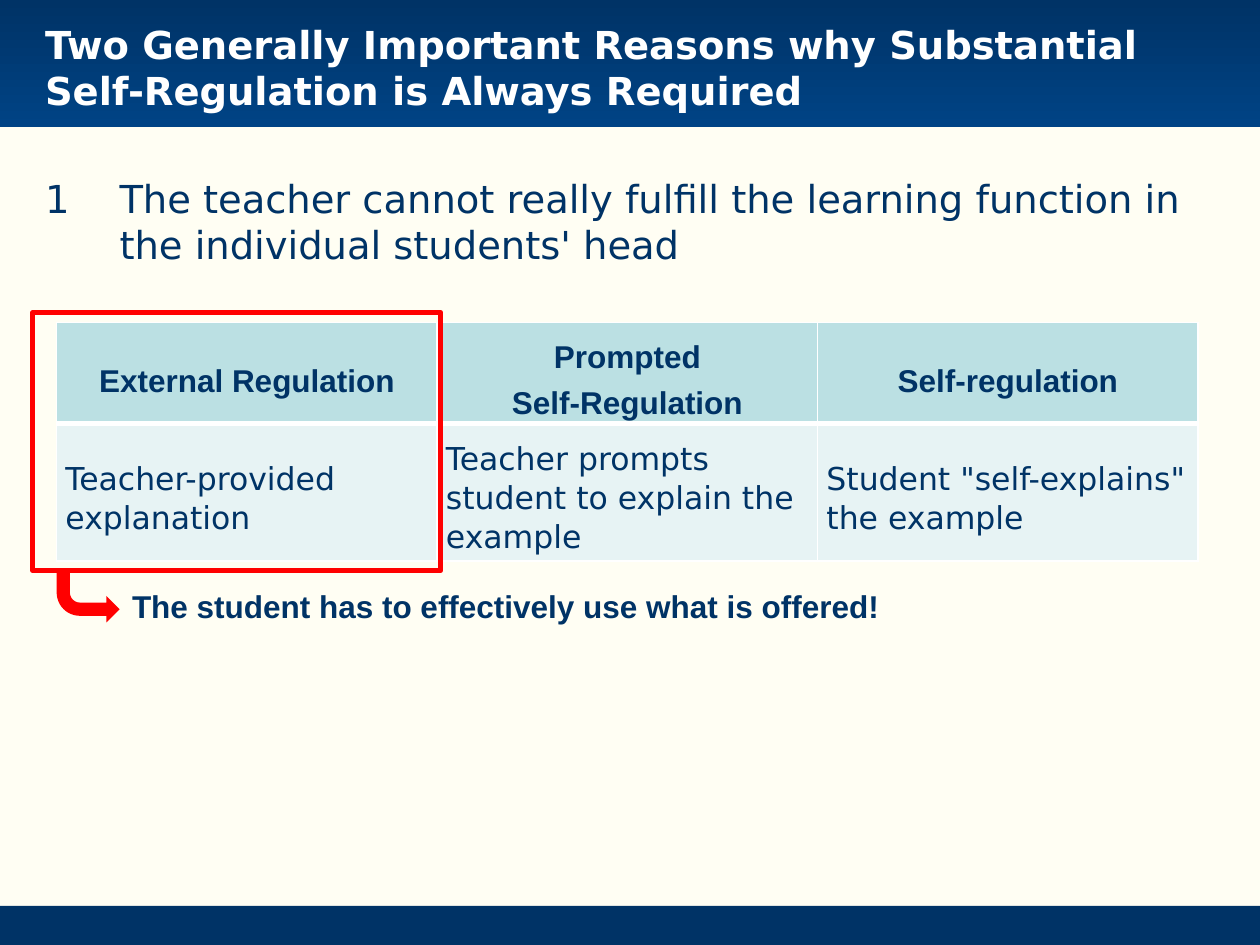
from lxml import etree
from pptx import Presentation
from pptx import util as u
from pptx.dml.color import RGBColor
from pptx.enum import shapes, text
from pptx.oxml.ns import qn

COLUMNS, ROWS = 100, 75
NAVY, WHITE, RED = "003366", "FFFFFF", "FF0000"
SANS, ARIAL = "DejaVu Sans", "Arial"


def color(value):
    return RGBColor.from_string(value)


class SlideBuilder:
    def __init__(self, deck, background):
        self.cell_width = deck.slide_width / COLUMNS
        self.cell_height = deck.slide_height / ROWS
        self.page = deck.slides.add_slide(deck.slide_layouts[6])
        self.paint(self.page.background, background)

    def across(self, columns):
        return u.Emu(round(columns * self.cell_width))

    def down(self, rows):
        return u.Emu(round(rows * self.cell_height))

    def place(self, left, top, width, height):
        return self.across(left), self.down(top), self.across(width), self.down(height)

    def paint(self, target, value):
        target.fill.solid()
        target.fill.fore_color.rgb = color(value)

    def style(self, para, size, face, bold=False, ink=NAVY):
        para.font.size = u.Pt(size)
        para.font.name = face
        para.font.bold = bold
        para.font.color.rgb = color(ink)

    def shape(self, kind, area, fill=None, outline=None):
        shape = self.page.shapes.add_shape(kind, *self.place(*area))
        shape.shadow.inherit = False
        if fill:
            self.paint(shape, fill)
        else:
            shape.fill.background()
        if outline:
            shape.line.color.rgb = color(outline)
            shape.line.width = u.Pt(2.75)
        else:
            shape.line.fill.background()
        return shape

    def gradient_bar(self, area, start, end):
        bar = self.shape(shapes.MSO_SHAPE.RECTANGLE, area, start)
        bar.fill.gradient()
        bar.fill.gradient_angle = 270
        for stop, value in zip(bar.fill.gradient_stops, (start, end)):
            stop.color.rgb = color(value)

    def turn_arrow(self, area, fill):
        arrow = self.shape(shapes.MSO_SHAPE.BENT_ARROW, area, fill)
        for index, share in enumerate((0.25, 0.25, 0.25, 0.44)):
            arrow.adjustments[index] = share
        arrow._element.spPr.find(qn("a:xfrm")).set("flipV", "1")

    def text(self, area, content, size, face, bold=False, ink=NAVY,
             anchor=text.MSO_ANCHOR.TOP, hanging=0):
        box = self.page.shapes.add_textbox(*self.place(*area))
        frame = box.text_frame
        frame.word_wrap = True
        frame.vertical_anchor = anchor
        para = frame.paragraphs[0]
        para.text = content
        if hanging:
            indent = self.across(hanging)
            properties = para._p.get_or_add_pPr()
            properties.set("marL", str(indent))
            properties.set("indent", str(-indent))
        self.style(para, size, face, bold, ink)

    def borders(self, cell, bottom):
        properties = cell._tc.get_or_add_tcPr()
        for side, width in (("L", 1), ("R", 1), ("T", 1), ("B", bottom)):
            line = etree.SubElement(properties, qn(f"a:ln{side}"), w=str(u.Pt(width)))
            fill = etree.SubElement(line, qn("a:solidFill"))
            etree.SubElement(fill, qn("a:srgbClr"), val=WHITE)

    def table_cell(self, cell, content, header):
        cell.vertical_anchor = text.MSO_ANCHOR.MIDDLE
        cell.margin_left = cell.margin_right = self.across(0.7)
        cell.margin_top = self.down(1.2 if header else 0.8)
        cell.margin_bottom = 0
        self.borders(cell, 3 if header else 1)
        self.paint(cell, "BBE0E3" if header else "E7F3F4")
        cell.text_frame.text = content
        paras = cell.text_frame.paragraphs
        paras[0].space_before = paras[0].space_after = u.Pt(6)
        if len(paras) == 1:
            paras[0].line_spacing = 1.07
        for para in paras:
            if header:
                para.alignment = text.PP_ALIGN.CENTER
            self.style(para, 18, ARIAL if header else SANS, header)

    def table(self, area, heights, rows):
        frame = self.page.shapes.add_table(len(rows), len(rows[0]), *self.place(*area))
        table = frame.table
        for row, height, contents in zip(table.rows, heights, rows):
            row.height = self.down(height)
            for cell, content in zip(row.cells, contents):
                self.table_cell(cell, content, header=contents is rows[0])


def main():
    deck = Presentation()
    deck.slide_width, deck.slide_height = u.Inches(10), u.Inches(7.5)
    slide = SlideBuilder(deck, "FFFEF3")

    slide.shape(shapes.MSO_SHAPE.RECTANGLE, (0, 71.9, COLUMNS, 3.1), NAVY)
    slide.gradient_bar((0, 0, COLUMNS, 10.1), NAVY, "004385")
    slide.text((2.6, 1.1, 89.6, 8.4),
               "Two Generally Important Reasons why Substantial Self-Regulation is Always Required",
               22, SANS, bold=True, ink=WHITE, anchor=text.MSO_ANCHOR.MIDDLE)
    slide.text((2.6, 13.4, 94.5, 8.5),
               "1\tThe teacher cannot really fulfill the learning function in the individual students' head",
               22, SANS, hanging=5.9)
    slide.table((4.5, 25.6, 90.6, 18.9), (5, 10.9), (
        ("External Regulation", "Prompted\nSelf-Regulation", "Self-regulation"),
        ("Teacher-provided explanation",
         "Teacher prompts student to explain the example",
         'Student "self-explains" the example'),
    ))
    slide.shape(shapes.MSO_SHAPE.RECTANGLE, (2.6, 24.8, 32.4, 20.5), outline=RED)
    slide.turn_arrow((4.5, 45.2, 5, 4.2), RED)
    slide.text((9.5, 46.1, 68, 4), "The student has to effectively use what is offered!",
               18, ARIAL, bold=True)

    deck.save("out.pptx")


if __name__ == "__main__":
    main()
